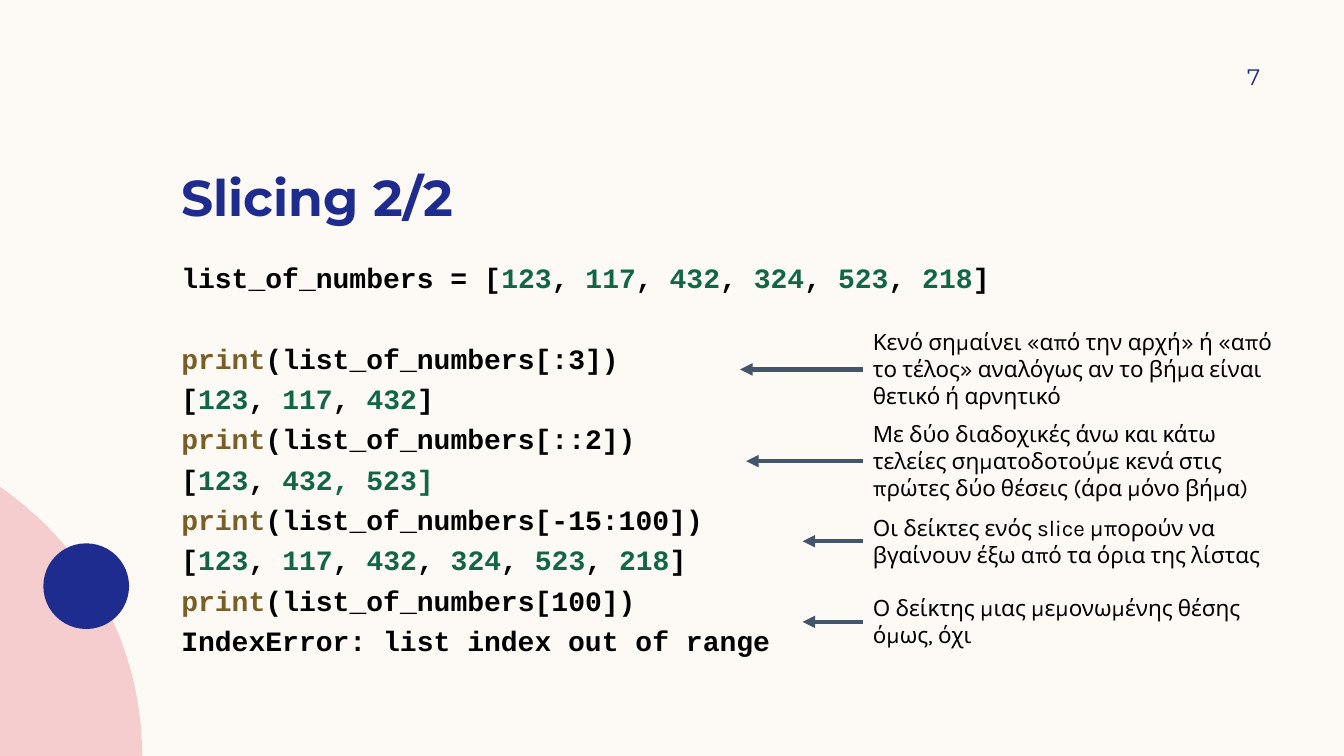
"""Build the slide on list slicing with code lines and arrowed notes."""
import pptx
import pptx.dml.color
import pptx.enum.shapes
import pptx.enum.text
import pptx.oxml
import pptx.oxml.ns
import pptx.util

PX = 9144
SLIDE_SIZE = (1333, 750)
THEME = {
    "paper": "FDFAF6", "pink": "F5CDCE", "navy": "1F2C8F", "arrow": "44546A",
    "code": "000000", "number": "116644", "call": "795E26",
    "heading_font": "Montserrat", "code_font": "Courier New", "note_font": "Karla",
    "heading_size": 36, "code_size": 20, "note_size": 16,
    "code_pitch": 28.8, "arrow_width": 3,
}


def number_list(numbers, opening="["):
    runs = [(opening, "code")]
    for position, number in enumerate(numbers):
        if position:
            runs.append((", ", "code"))
        runs.append((number, "number"))
    return runs + [("]", "code")]


def print_call(index):
    return [("print", "call"), (f"(list_of_numbers[{index}])", "code")]


NUMBERS = ["123", "117", "432", "324", "523", "218"]
TITLE = "Slicing 2/2"
PAGE_NUMBER = "7"
DEFINITION = number_list(NUMBERS, "list_of_numbers = [")
SESSION = [
    print_call(":3"),
    number_list(NUMBERS[:3]),
    print_call("::2"),
    [("[", "code"), ("123", "number"), (", ", "code"), ("432, 523]", "number")],
    print_call("-15:100"),
    number_list(NUMBERS),
    print_call("100"),
    [("IndexError: list index out of range", "code")],
]
NOTES = [
    ("Κενό σημαίνει «από την αρχή» ή «από το τέλος» αναλόγως αν το βήμα είναι θετικό ή αρνητικό",
     321, 91, 734),
    ("Με δύο διαδοχικές άνω και κάτω τελείες σηματοδοτούμε κενά στις πρώτες δύο θέσεις (άρα μόνο βήμα)",
     412, 91, 740),
    ("Οι δείκτες ενός slice μπορούν να βγαίνουν έξω από τα όρια της λίστας", 505, 64, 796),
    ("Ο δείκτης μιας μεμονωμένης θέσης όμως, όχι", 585, 64, 796),
]
NOTE_LEFT, NOTE_WIDTH = 856, 426
HILL_CURVE = [(0, 483), (85, 542), (141, 639), (141, 750)]
CURVE_STEPS = 40


def colour(name):
    return pptx.dml.color.RGBColor.from_string(THEME[name])


def emu(*lengths):
    return [pptx.util.Emu(round(length * PX)) for length in lengths]


def paint(shape, name):
    shape.shadow.inherit = False
    shape.fill.solid()
    shape.fill.fore_color.rgb = colour(name)
    shape.line.fill.background()


def add_run(paragraph, text, role, font, size, bold=False):
    run = paragraph.add_run()
    run.text = text
    run.font.name = THEME[font]
    run.font.size = pptx.util.Pt(THEME[size])
    run.font.bold = bold
    run.font.color.rgb = colour(role)


def add_text(slide, box, insets=(10, 5, 10, 5), anchor="TOP"):
    holder = slide.shapes.add_textbox(*emu(*box))
    frame = holder.text_frame
    frame.word_wrap = True
    frame.vertical_anchor = pptx.enum.text.MSO_ANCHOR[anchor]
    (frame.margin_left, frame.margin_top,
     frame.margin_right, frame.margin_bottom) = emu(*insets)
    return holder


def curve_points(curve, steps):
    for step in range(steps + 1):
        t = step / steps
        weights = ((1 - t) ** 3, 3 * t * (1 - t) ** 2, 3 * t * t * (1 - t), t ** 3)
        yield tuple(emu(*(sum(w * point[axis] for w, point in zip(weights, curve))
                          for axis in (0, 1))))


def add_decoration(slide):
    start, *rest = curve_points(HILL_CURVE, CURVE_STEPS)
    hill = slide.shapes.build_freeform(*start, scale=1.0)
    hill.add_line_segments(rest + [tuple(emu(0, 750))], close=True)
    paint(hill.convert_to_shape(), "pink")
    dot = slide.shapes.add_shape(pptx.enum.shapes.MSO_SHAPE.OVAL, *emu(43, 539, 85, 85))
    paint(dot, "navy")


def add_code(slide):
    frame = add_text(slide, (170, 252, 1113, 433), (10, 0, 10, 0)).text_frame
    pitch = pptx.util.Pt(THEME["code_pitch"])
    for position, runs in enumerate([DEFINITION] + SESSION):
        line = frame.add_paragraph() if position else frame.paragraphs[0]
        line.line_spacing = pitch
        if position == 1:
            line.space_before = pitch
        for text, role in runs:
            add_run(line, text, role, "code_font", "code_size", True)


def add_note(slide, text, top, height, arrow_tip):
    note = add_text(slide, (NOTE_LEFT, top, NOTE_WIDTH, height))
    add_run(note.text_frame.paragraphs[0], text, "code", "note_font", "note_size")
    middle = top + height / 2
    arrow = slide.shapes.add_connector(pptx.enum.shapes.MSO_CONNECTOR.STRAIGHT,
                                       *emu(NOTE_LEFT, middle, arrow_tip, middle))
    arrow.begin_connect(note, 1)
    arrow.line.color.rgb = colour("arrow")
    arrow.line.width = pptx.util.Pt(THEME["arrow_width"])
    stroke = arrow.line._get_or_add_ln()
    pptx.oxml.ns.qn("a:tailEnd")
    stroke.append(pptx.oxml.parse_xml(
        f'<a:tailEnd {pptx.oxml.ns.nsdecls("a")} type="triangle"/>'))
    arrow._element.spPr.append(pptx.oxml.parse_xml(
        f'<a:effectLst {pptx.oxml.ns.nsdecls("a")}/>'))


def main():
    deck = pptx.Presentation()
    deck.slide_width, deck.slide_height = emu(*SLIDE_SIZE)
    slide = deck.slides.add_slide(deck.slide_layouts[6])
    slide.background.fill.solid()
    slide.background.fill.fore_color.rgb = colour("paper")
    add_decoration(slide)
    title = add_text(slide, (170, 116, 1080, 109), (10, 0, 10, 0), "BOTTOM")
    add_run(title.text_frame.paragraphs[0], TITLE, "navy", "heading_font", "heading_size", True)
    add_code(slide)
    page = add_text(slide, (1142, 50, 108, 52), (10, 5, 0, 5), "MIDDLE")
    page_line = page.text_frame.paragraphs[0]
    page_line.alignment = pptx.enum.text.PP_ALIGN.RIGHT
    add_run(page_line, PAGE_NUMBER, "navy", "heading_font", "note_size")
    for note in NOTES:
        add_note(slide, *note)
    deck.save("out.pptx")


if __name__ == "__main__":
    main()
